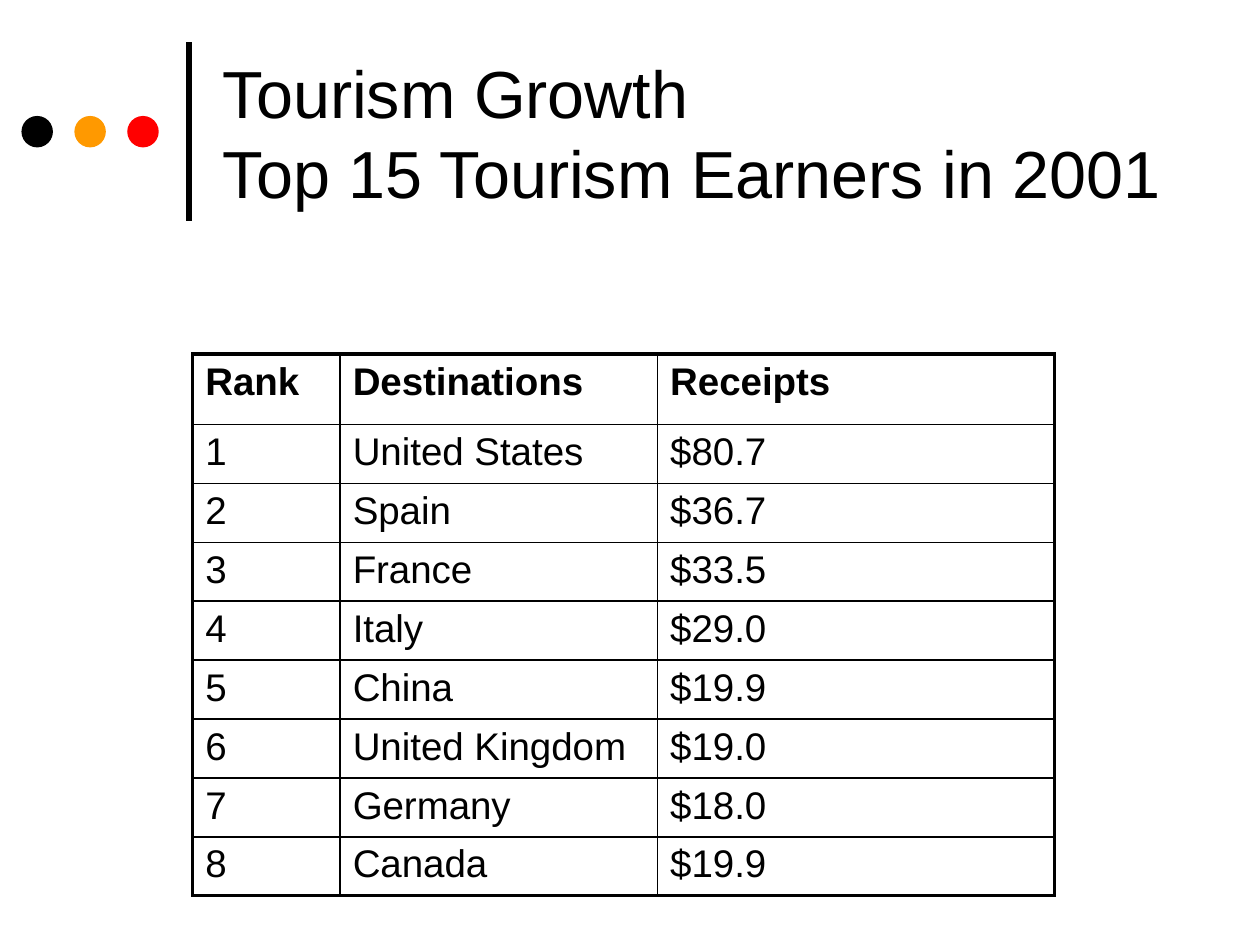
from pptx import Presentation
from pptx.dml.color import RGBColor as RGB
from pptx.enum.shapes import MSO_CONNECTOR as LINE, MSO_SHAPE as SHAPE
from pptx.enum.text import MSO_ANCHOR as ANCHOR
from pptx.oxml.ns import qn
from pptx.util import Inches, Pt
from lxml.etree import SubElement as Sub

BLACK = RGB(0, 0, 0)
ORANGE = RGB(0xFF, 0x99, 0)
RED = RGB(0xFF, 0, 0)
FONT = "Arial"
THIN, THICK = 1, 2.25

TITLE = "Tourism Growth\vTop 15 Tourism Earners in 2001"
DOTS = [BLACK, ORANGE, RED]
HEAD = ("Rank", "Destinations", "Receipts")
EARNERS = [
    ("United States", "$80.7"),
    ("Spain", "$36.7"),
    ("France", "$33.5"),
    ("Italy", "$29.0"),
    ("China", "$19.9"),
    ("United Kingdom", "$19.0"),
    ("Germany", "$18.0"),
    ("Canada", "$19.9"),
]
ROWS = [HEAD] + [(str(n), *row) for n, row in enumerate(EARNERS, 1)]
WIDTHS = [1.17, 2.52, 3.15]
HEIGHTS = [0.56] + [0.44] * 4 + [0.47] + [0.44] * 3


def style(par, size, bold=False):
    font = par.font
    font.name, font.size, font.bold = FONT, Pt(size), bold
    font.color.rgb = BLACK


def border(cell, sides):
    props = cell._tc.get_or_add_tcPr()
    for spot, (side, width) in enumerate(sides.items()):
        line = props.makeelement(qn(f"a:ln{side}"), {"w": str(Pt(width))})
        fill = Sub(line, qn("a:solidFill"))
        Sub(fill, qn("a:srgbClr"), val=str(BLACK))
        props.insert(spot, line)


prs = Presentation()
prs.slide_width, prs.slide_height = Inches(10), Inches(7.5)
slide = prs.slides.add_slide(prs.slide_layouts[6])
shapes = slide.shapes

# Upright rule beside the title
rule = shapes.add_connector(LINE.STRAIGHT, Inches(1.5), Inches(1.75),
                            Inches(1.5), Inches(0.33))
rule.line.color.rgb = BLACK
rule.line.width = Pt(3)
Sub(rule._element.spPr, qn("a:effectLst"))

# Row of dots
for n, color in enumerate(DOTS):
    dot = shapes.add_shape(SHAPE.OVAL, Inches(0.17 + 0.42 * n), Inches(0.92),
                           Inches(0.25), Inches(0.25))
    dot.shadow.inherit = False
    dot.fill.solid()
    dot.fill.fore_color.rgb = color
    dot.line.fill.background()

# Title
box = shapes.add_textbox(Inches(1.67), Inches(0.21), Inches(7.67), Inches(1.67))
frame = box.text_frame
frame.word_wrap = True
frame.vertical_anchor = ANCHOR.MIDDLE
frame.text = TITLE
style(frame.paragraphs[0], 38)

# Table of earners
table = shapes.add_table(len(ROWS), len(HEAD), Inches(1.53), Inches(2.81),
                         Inches(sum(WIDTHS)), Inches(sum(HEIGHTS))).table
table.horz_banding = False
for col, width in zip(table.columns, WIDTHS):
    col.width = Inches(width)
for row, height in zip(table.rows, HEIGHTS):
    row.height = Inches(height)
for r, row in enumerate(ROWS):
    for c, text in enumerate(row):
        cell = table.cell(r, c)
        cell.text = text
        cell.fill.background()
        style(cell.text_frame.paragraphs[0], 22, bold=r == 0)
        outer = {"L": c == 0, "R": c == len(HEAD) - 1,
                 "T": r == 0, "B": r == len(ROWS) - 1}
        border(cell, {side: THICK if edge else THIN
                      for side, edge in outer.items()})

prs.save("out.pptx")
